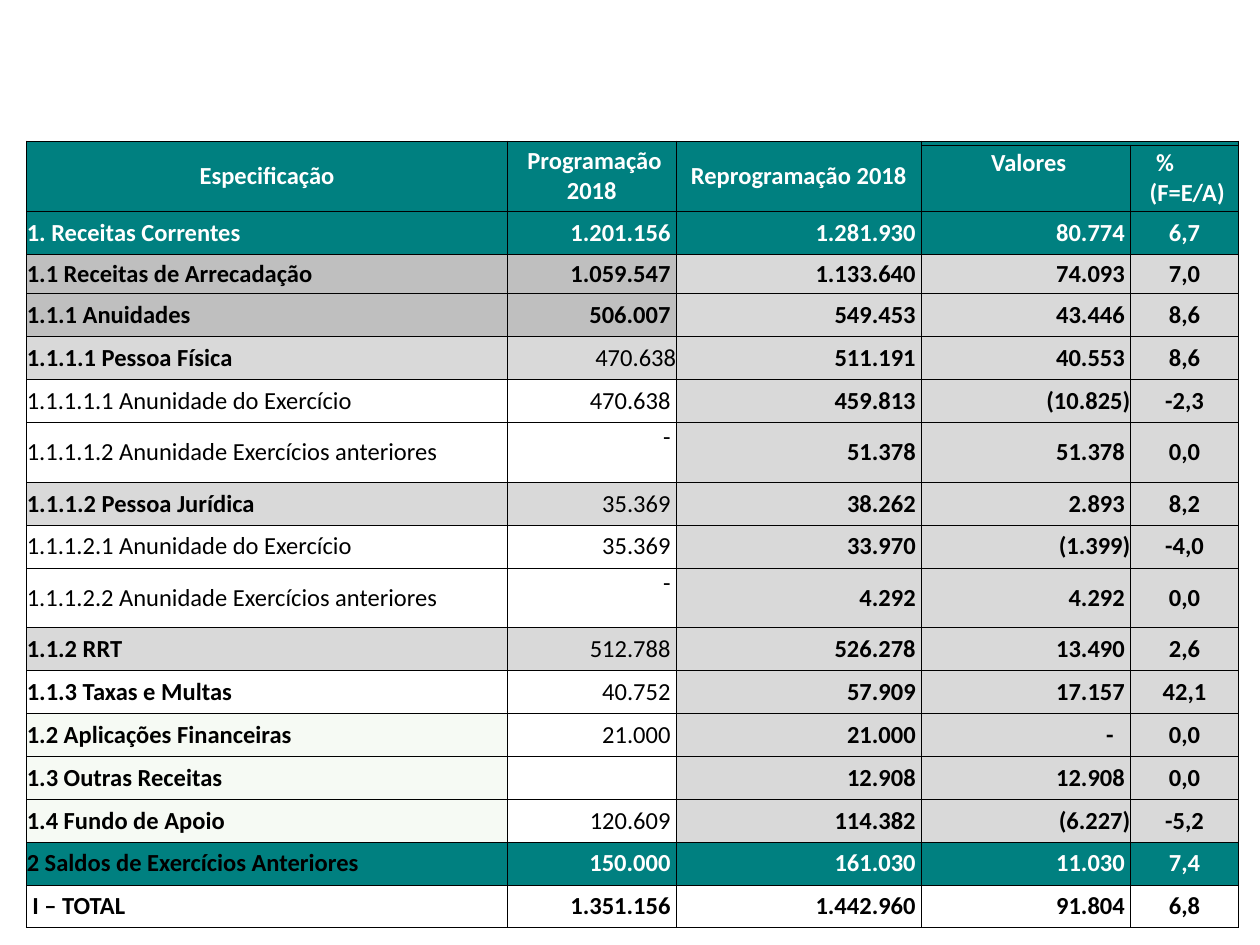
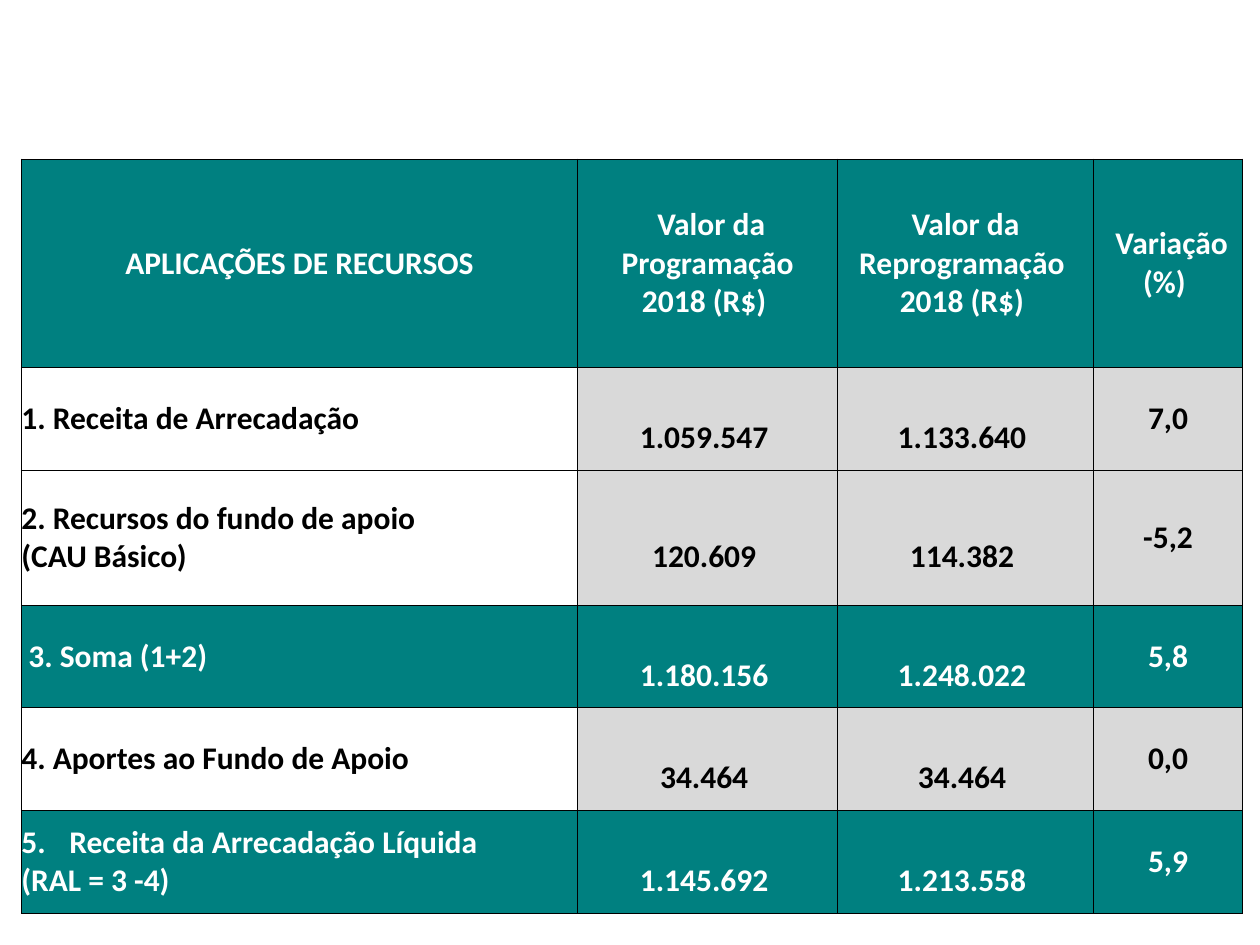
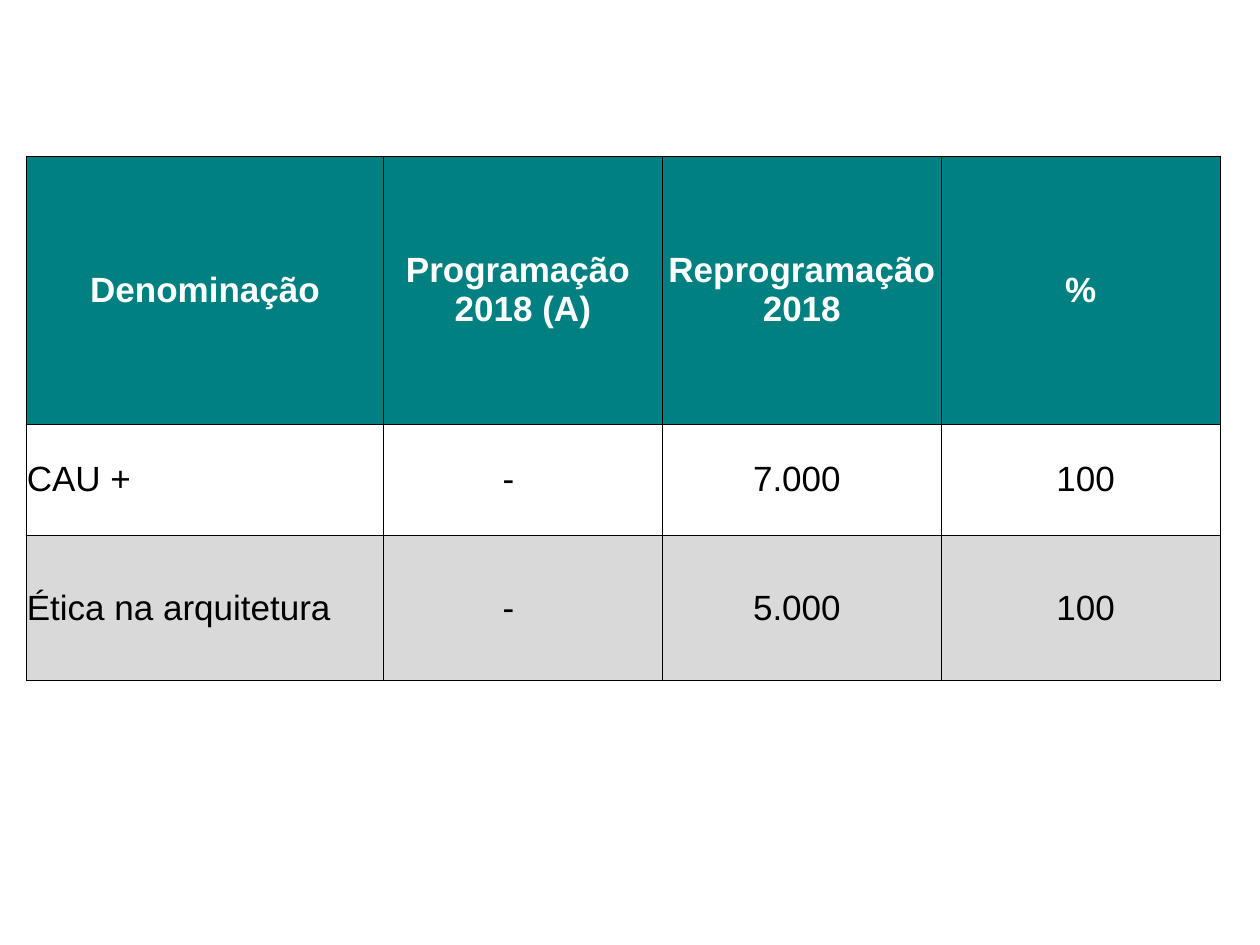
from dataclasses import dataclass

import pptx
import pptx.dml.color
import pptx.enum.text
import pptx.oxml.ns
import pptx.util
from lxml import etree

Pt = pptx.util.Pt
RGBColor = pptx.dml.color.RGBColor
Align = pptx.enum.text.PP_ALIGN
Anchor = pptx.enum.text.MSO_ANCHOR
qn = pptx.oxml.ns.qn

TEAL = RGBColor(0x00, 0x80, 0x80)
DARK_GREY = RGBColor(0xBF, 0xBF, 0xBF)
LIGHT_GREY = RGBColor(0xD9, 0xD9, 0xD9)
PALE_GREEN = RGBColor(0xF6, 0xFA, 0xF4)
WHITE = RGBColor(0xFF, 0xFF, 0xFF)
BLACK = RGBColor(0x00, 0x00, 0x00)

THIN, THICK = Pt(0.5), Pt(1)
NUMBER_GAP = 3.2


@dataclass
class CellStyle:
    font: str
    size: float
    fill: RGBColor = WHITE
    color: RGBColor = BLACK
    bold: bool = True
    align: Align = Align.LEFT


@dataclass
class RevenueLevel:
    """Look of one kind of revenue row."""
    label_fill: RGBColor
    programmed_fill: RGBColor
    result_fill: RGBColor = LIGHT_GREY
    label_color: RGBColor = BLACK
    value_color: RGBColor = BLACK
    label_bold: bool = True
    programmed_bold: bool = False


SECTION = RevenueLevel(TEAL, TEAL, TEAL, WHITE, WHITE, programmed_bold=True)
BALANCE = RevenueLevel(TEAL, TEAL, TEAL, BLACK, WHITE, programmed_bold=True)
TOTAL = RevenueLevel(WHITE, WHITE, WHITE, programmed_bold=True)
GROUP = RevenueLevel(DARK_GREY, DARK_GREY, programmed_bold=True)
SUBGROUP = RevenueLevel(LIGHT_GREY, LIGHT_GREY)
DETAIL = RevenueLevel(WHITE, WHITE, label_bold=False)
FEES = RevenueLevel(WHITE, WHITE)
OTHER = RevenueLevel(PALE_GREEN, WHITE)

REVENUES = [
    (SECTION, "1. Receitas Correntes", "1.201.156", "1.281.930", "80.774", "6,7"),
    (GROUP, "1.1 Receitas de Arrecadação", "1.059.547", "1.133.640", "74.093", "7,0"),
    (GROUP, "1.1.1 Anuidades", "506.007", "549.453", "43.446", "8,6"),
    (SUBGROUP, "1.1.1.1 Pessoa Física", "470.638", "511.191", "40.553", "8,6"),
    (DETAIL, "1.1.1.1.1 Anunidade do Exercício", "470.638", "459.813", "(10.825)", "-2,3"),
    (DETAIL, "1.1.1.1.2 Anunidade Exercícios anteriores", "-", "51.378", "51.378", "0,0"),
    (SUBGROUP, "1.1.1.2 Pessoa Jurídica", "35.369", "38.262", "2.893", "8,2"),
    (DETAIL, "1.1.1.2.1 Anunidade do Exercício", "35.369", "33.970", "(1.399)", "-4,0"),
    (DETAIL, "1.1.1.2.2 Anunidade Exercícios anteriores", "-", "4.292", "4.292", "0,0"),
    (SUBGROUP, "1.1.2 RRT", "512.788", "526.278", "13.490", "2,6"),
    (FEES, "1.1.3 Taxas e Multas", "40.752", "57.909", "17.157", "42,1"),
    (OTHER, "1.2 Aplicações Financeiras", "21.000", "21.000", "-", "0,0"),
    (OTHER, "1.3 Outras Receitas", "", "12.908", "12.908", "0,0"),
    (OTHER, "1.4 Fundo de Apoio", "120.609", "114.382", "(6.227)", "-5,2"),
    (BALANCE, "2 Saldos de Exercícios Anteriores", "150.000", "161.030", "11.030", "7,4"),
    (TOTAL, " I – TOTAL", "1.351.156", "1.442.960", "91.804", "6,8"),
]

APPLICATION_HEADER = [
    " APLICAÇÕES DE RECURSOS ",
    " Valor da\n Programação \n2018 (R$) ",
    " Valor da \nReprogramação \n2018 (R$) ",
    " Variação (%) ",
]
# Each label is a list of paragraphs; the flag marks the highlighted sums.
APPLICATIONS = [
    (["1. Receita de Arrecadação"], "1.059.547", "1.133.640", "7,0", False),
    (["2. Recursos do fundo de apoio", "(CAU Básico)"], "120.609", "114.382", "-5,2", False),
    ([" 3. Soma (1+2)"], "1.180.156", "1.248.022", "5,8", True),
    (["4. Aportes ao Fundo de Apoio"], "34.464", "34.464", "0,0", False),
    (["Receita da Arrecadação Líquida", "(RAL = 3 -4)"], "1.145.692", "1.213.558", "5,9", True),
]

PROJECT_HEADER = ["Denominação", "Programação \n2018 (A)", "Reprogramação 2018", "%"]
PROJECTS = [
    (WHITE, "CAU +", "-", "7.000", "100"),
    (LIGHT_GREY, "Ética na arquitetura", "-", "5.000", "100"),
]


def set_borders(cell, left=THIN, right=THIN):
    properties = cell._tc.get_or_add_tcPr()
    widths = {"lnL": left, "lnR": right, "lnT": THIN, "lnB": THIN}
    for position, (side, width) in enumerate(widths.items()):
        line = etree.Element(qn("a:" + side), w=str(width))
        solid = etree.SubElement(line, qn("a:solidFill"))
        etree.SubElement(solid, qn("a:srgbClr"), val=str(BLACK))
        properties.insert(position, line)


def add_table(slide, left, top, widths, heights):
    frame = slide.shapes.add_table(len(heights), len(widths), Pt(left), Pt(top),
                                   Pt(sum(widths)), Pt(sum(heights)))
    table = frame.table
    table.first_row = table.horz_banding = False
    for column, width in zip(table.columns, widths):
        column.width = Pt(width)
    for row, height in zip(table.rows, heights):
        row.height = Pt(height)
    for cell in table.iter_cells():
        cell.margin_left = cell.margin_right = cell.margin_top = cell.margin_bottom = 0
        cell.vertical_anchor = Anchor.MIDDLE
    return table


def fill_cell(cell, paragraphs, style, left=0, right=0, top=0):
    """Write a string, or a list of paragraphs, with the given insets."""
    cell.fill.solid()
    cell.fill.fore_color.rgb = style.fill
    set_borders(cell)
    cell.margin_left, cell.margin_right, cell.margin_top = Pt(left), Pt(right), Pt(top)
    if isinstance(paragraphs, str):
        paragraphs = [paragraphs]
    for index, text in enumerate(paragraphs):
        frame = cell.text_frame
        paragraph = frame.add_paragraph() if index else frame.paragraphs[0]
        paragraph.alignment = style.align
        if not text:
            etree.SubElement(paragraph._p, qn("a:endParaRPr"), sz="100")
            continue
        for line_index, line in enumerate(text.split("\n")):
            if line_index:
                paragraph.add_line_break()
            run = paragraph.add_run()
            run.text = line
            run.font.name, run.font.size = style.font, Pt(style.size)
            run.font.bold, run.font.color.rgb = style.bold, style.color


def indent_paragraph(paragraph, first_line, margin=0):
    properties = paragraph._p.get_or_add_pPr()
    properties.set("marL", str(Pt(margin)))
    properties.set("indent", str(Pt(first_line)))
    return properties


def fill_revenue_header(table):
    header = CellStyle("Calibri", 14, TEAL, WHITE, align=Align.CENTER)
    titles = [" Programação 2018", "Reprogramação 2018"]
    for column, title in enumerate(["Especificação"] + titles):
        fill_cell(table.cell(0, column), title, header)
        fill_cell(table.cell(1, column), "", header)
        table.cell(0, column).merge(table.cell(1, column))
    for column in (3, 4):
        fill_cell(table.cell(0, column), "", header)
    table.cell(0, 3).merge(table.cell(0, 4))
    values, percent = table.cell(1, 3), table.cell(1, 4)
    fill_cell(values, " Valores", header, top=2)
    values.vertical_anchor = Anchor.TOP
    header.align = Align.LEFT
    fill_cell(percent, "%\n(F=E/A)", header, left=11)
    indent_paragraph(percent.text_frame.paragraphs[0], 3.7)


def build_revenue_slide(slide):
    body_heights = [34.2 if row[2] == "-" else 24.5 for row in REVENUES]
    body_heights[1] = 22.7
    table = add_table(slide, 15.3, 80.6, [274.6, 96.5, 140.1, 119.5, 61.8],
                      [2.4, 37.8] + body_heights)
    fill_revenue_header(table)
    for index, (level, label, programmed, *results) in enumerate(REVENUES, start=2):
        cells = [table.cell(index, column) for column in range(5)]
        fill_cell(cells[0], label, CellStyle("Calibri", 14, level.label_fill,
                                             level.label_color, level.label_bold))
        value = CellStyle("Calibri", 14, level.programmed_fill, level.value_color,
                          level.programmed_bold, Align.RIGHT)
        flush = label.endswith("Pessoa Física")
        fill_cell(cells[1], programmed, value, right=0 if flush else NUMBER_GAP)
        if programmed == "-":
            cells[1].vertical_anchor = Anchor.TOP
        value.fill, value.bold = level.result_fill, True
        reprogrammed, difference, percent = results
        fill_cell(cells[2], reprogrammed, value, right=NUMBER_GAP)
        gap = 0 if difference.endswith(")") else NUMBER_GAP
        fill_cell(cells[3], difference, value, right=3 * gap if difference == "-" else gap)
        value.align = Align.CENTER
        fill_cell(cells[4], percent, value)


def build_application_slide(slide):
    table = add_table(slide, 12.2, 90.9, [318, 148.4, 146.3, 85.2],
                      [119, 58.7, 77.1, 58.7, 58.7, 58.7])
    header = CellStyle("Calibri", 18, TEAL, WHITE, align=Align.CENTER)
    for column, title in enumerate(APPLICATION_HEADER):
        fill_cell(table.cell(0, column), title, header)
    for row, (label, programmed, reprogrammed, change, is_sum) in enumerate(APPLICATIONS, 1):
        color = WHITE if is_sum else BLACK
        fill_cell(table.cell(row, 0), label,
                  CellStyle("Calibri", 18, TEAL if is_sum else WHITE, color))
        value = CellStyle("Calibri", 18, TEAL if is_sum else LIGHT_GREY, color,
                          align=Align.CENTER)
        for column, amount in enumerate((programmed, reprogrammed), start=1):
            fill_cell(table.cell(row, column), amount, value, right=4, top=22)
        fill_cell(table.cell(row, 3), change, value)
    net_revenue = table.cell(len(APPLICATIONS), 0).text_frame.paragraphs[0]
    properties = indent_paragraph(net_revenue, -27.4, 27.4)
    etree.SubElement(properties, qn("a:buFont"), typeface="+mj-lt")
    etree.SubElement(properties, qn("a:buAutoNum"), type="arabicPeriod", startAt="5")


def build_project_slide(slide):
    table = add_table(slide, 15.3, 89.2, [203.8] + [159.4] * 3, [153.2, 63.4, 83.3])
    header = CellStyle("Arial", 20, TEAL, WHITE, align=Align.CENTER)
    for column, title in enumerate(PROJECT_HEADER):
        fill_cell(table.cell(0, column), title, header)
    for cell, side in ((table.cell(0, 2), "lnR"), (table.cell(0, 3), "lnL")):
        cell._tc.tcPr.find(qn("a:" + side)).set("w", str(THICK))
    for row, (fill, name, programmed, reprogrammed, percent) in enumerate(PROJECTS, 1):
        style = CellStyle("Arial", 20, fill, bold=False)
        fill_cell(table.cell(row, 0), name, style)
        style.align = Align.CENTER
        fill_cell(table.cell(row, 1), programmed, style, right=16.6)
        fill_cell(table.cell(row, 2), reprogrammed, style, right=5.6)
        fill_cell(table.cell(row, 3), percent, style, left=5.6)


def main():
    presentation = pptx.Presentation()
    presentation.slide_width, presentation.slide_height = Pt(720), Pt(540)
    for build in (build_revenue_slide, build_application_slide, build_project_slide):
        build(presentation.slides.add_slide(presentation.slide_layouts[6]))
    presentation.save("out.pptx")


if __name__ == "__main__":
    main()
